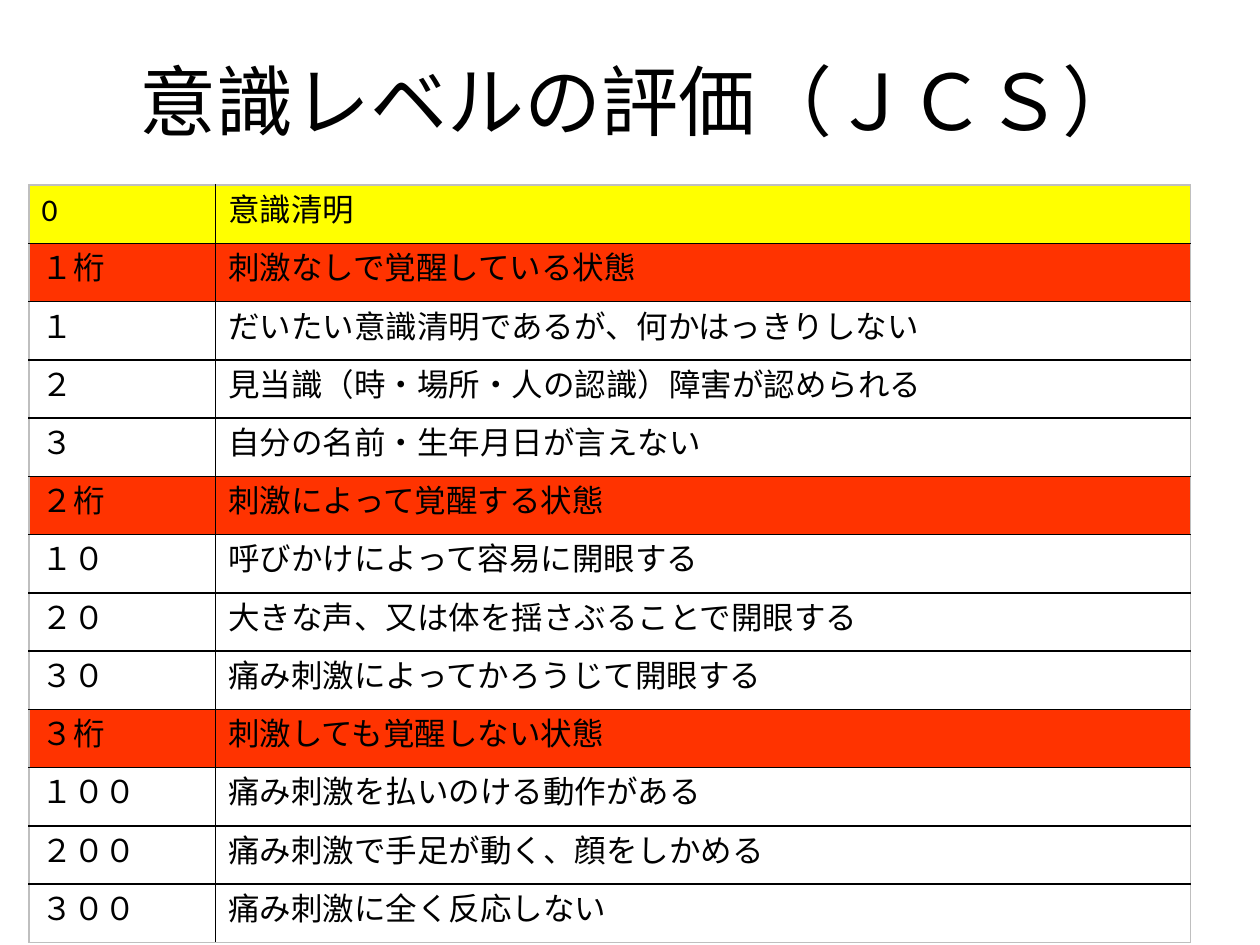
from lxml import etree
from pptx import Presentation
from pptx.dml.color import RGBColor
from pptx.enum.text import MSO_ANCHOR, PP_ALIGN
from pptx.oxml.ns import qn
from pptx.util import Inches, Pt

MIDDLE = MSO_ANCHOR.MIDDLE
CENTER = PP_ALIGN.CENTER

COLORS = {
    "text": "000000",
    "inner": "000000",
    "outer": "BFBFBF",
    "clear": "FFFF00",
    "group": "FF3300",
}
TITLE = "意識レベルの評価（ＪＣＳ）"
LEVELS = [
    ("0", "意識清明", "clear"),
    ("１桁", "刺激なしで覚醒している状態", "group"),
    ("１", "だいたい意識清明であるが、何かはっきりしない", None),
    ("２", "見当識（時・場所・人の認識）障害が認められる", None),
    ("３", "自分の名前・生年月日が言えない", None),
    ("２桁", "刺激によって覚醒する状態", "group"),
    ("１０", "呼びかけによって容易に開眼する", None),
    ("２０", "大きな声、又は体を揺さぶることで開眼する", None),
    ("３０", "痛み刺激によってかろうじて開眼する", None),
    ("３桁", "刺激しても覚醒しない状態", "group"),
    ("１００", "痛み刺激を払いのける動作がある", None),
    ("２００", "痛み刺激で手足が動く、顔をしかめる", None),
    ("３００", "痛み刺激に全く反応しない", None),
]
COLUMN_WIDTHS = [1.48, 7.74]
TABLE_HEIGHT = 6.01


def style_text(para, font_name, size):
    for span in para.runs:
        span.font.size = Pt(size)
        span.font.color.rgb = RGBColor.from_string(COLORS["text"])
        span.font.name = font_name
        etree.SubElement(span._r.get_or_add_rPr(), qn("a:ea"), typeface=font_name)


def add_border(cell, side, color):
    properties = cell._tc.get_or_add_tcPr()
    line = etree.SubElement(properties, qn(f"a:ln{side}"), w=str(Pt(1)))
    fill = etree.SubElement(line, qn("a:solidFill"))
    etree.SubElement(fill, qn("a:srgbClr"), val=COLORS[color])


def add_title(page):
    box = page.shapes.add_textbox(Inches(0.33), Inches(0.33), Inches(9.5), Inches(0.92))
    frame = box.text_frame
    frame.word_wrap = True
    frame.vertical_anchor = MIDDLE
    frame.text = TITLE
    para = frame.paragraphs[0]
    para.alignment = CENTER
    style_text(para, "Arial", 44)


def add_levels(page):
    row_count, column_count = len(LEVELS), len(COLUMN_WIDTHS)
    table = page.shapes.add_table(
        row_count, column_count, Inches(0.23), Inches(1.47),
        Inches(sum(COLUMN_WIDTHS)), Inches(TABLE_HEIGHT),
    ).table
    table.first_row = False
    table.horz_banding = False
    for column, width in zip(table.columns, COLUMN_WIDTHS):
        column.width = Inches(width)
    for row_index, (code, meaning, fill) in enumerate(LEVELS):
        table.rows[row_index].height = Inches(TABLE_HEIGHT / row_count)
        for column_index, text in enumerate((code, meaning)):
            cell = table.cell(row_index, column_index)
            cell.text_frame.text = text
            style_text(cell.text_frame.paragraphs[0], "Calibri", 18)
            edges = {
                "L": column_index == 0,
                "R": column_index == column_count - 1,
                "T": row_index == 0,
                "B": row_index == row_count - 1,
            }
            for side, is_outer in edges.items():
                add_border(cell, side, "outer" if is_outer else "inner")
            if fill:
                cell.fill.solid()
                cell.fill.fore_color.rgb = RGBColor.from_string(COLORS[fill])
            else:
                cell.fill.background()


def main():
    deck = Presentation()
    deck.slide_width, deck.slide_height = Inches(10), Inches(7.5)
    page = deck.slides.add_slide(deck.slide_layouts[6])
    add_title(page)
    add_levels(page)
    deck.save("out.pptx")


if __name__ == "__main__":
    main()
